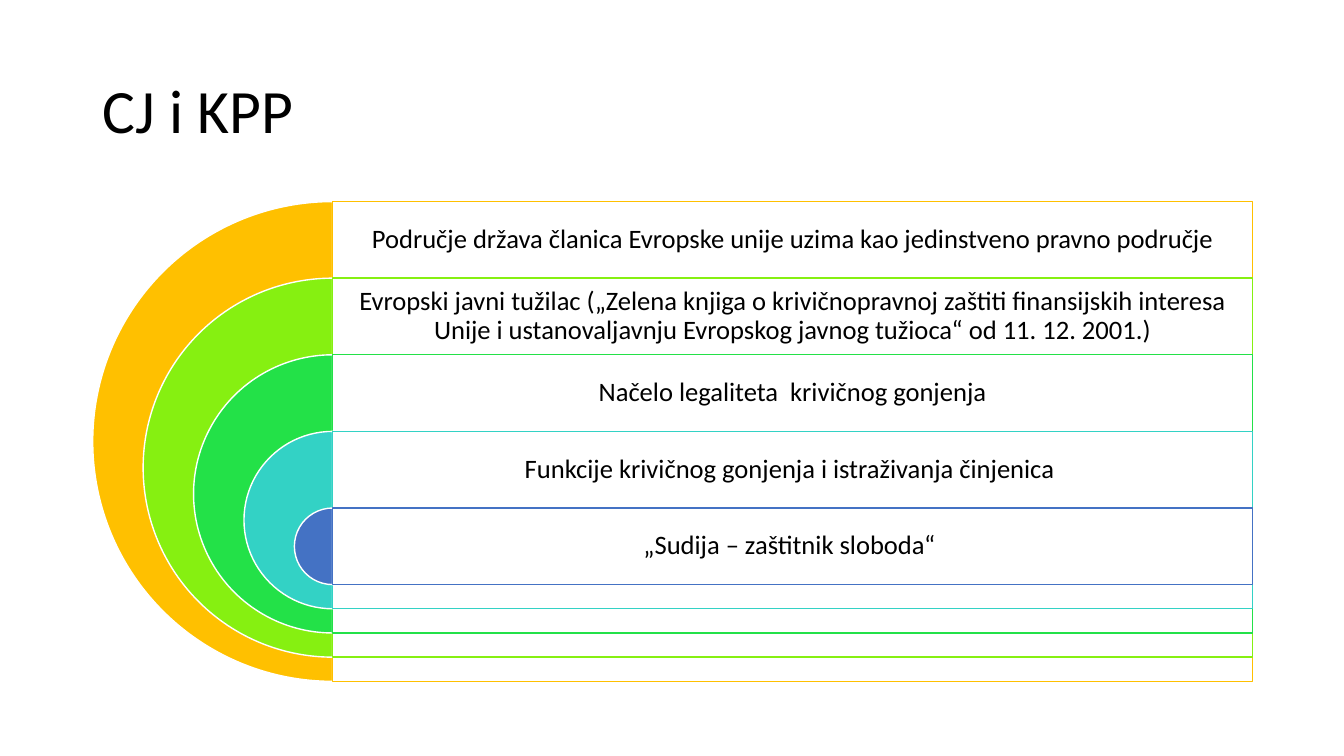
import pptx
import pptx.dml.color
import pptx.enum.shapes
import pptx.enum.text
import pptx.oxml
import pptx.oxml.ns
import pptx.util

COLORS = {
    "text": "000000",
    "white": "FFFFFF",
    "amber": "FFC000",
    "lime": "86F011",
    "green": "23E148",
    "teal": "33D2C5",
    "blue": "4472C4",
}

LAYERS = [
    ("amber", "Područje država članica Evropske unije uzima kao jedinstveno pravno područje"),
    ("lime", "Evropski javni tužilac („Zelena knjiga o krivičnopravnoj zaštiti finansijskih "
             "interesa Unije i ustanovaljavnju Evropskog javnog tužioca“ od 11. 12. 2001.)"),
    ("green", "Načelo legaliteta  krivičnog gonjenja"),
    ("teal", "Funkcije krivičnog gonjenja i istraživanja činjenica "),
    ("blue", "„Sudija – zaštitnik sloboda“ "),
]

SHAPE = pptx.enum.shapes.MSO_SHAPE
ALIGN = pptx.enum.text.PP_ALIGN


class Deck:
    FONT = "Calibri"
    LEFT, TOP = 0.92, 2.0  # grid origin in inches
    COL, ROW = 0.5, 0.76   # grid steps in inches

    def __init__(self):
        self.prs = pptx.Presentation()
        self.prs.slide_width = pptx.util.Inches(13.33)
        self.prs.slide_height = pptx.util.Inches(7.5)
        self.s = self.prs.slides.add_slide(self.prs.slide_layouts[5])

    def box(self, col, row, cols, rows):
        """Turn grid cells into left, top, width and height."""
        inches = (self.LEFT + col * self.COL, self.TOP + row * self.ROW,
                  cols * self.COL, rows * self.ROW)
        return [pptx.util.Inches(v) for v in inches]

    def color(self, name):
        return pptx.dml.color.RGBColor.from_string(COLORS[name])

    def add_text(self, sp, text, size, align):
        tf = sp.text_frame
        tf.word_wrap = True
        tf.auto_size = pptx.enum.text.MSO_AUTO_SIZE.NONE
        tf.vertical_anchor = pptx.enum.text.MSO_ANCHOR.MIDDLE
        p = tf.paragraphs[0]
        p.alignment = align
        p.line_spacing = 0.9
        r = p.add_run()
        r.text = text
        r.font.name = self.FONT
        r.font.size = pptx.util.Pt(size)
        r.font.color.rgb = self.color("text")

    def title(self, text, *cells):
        sp = self.s.shapes.title
        sp.left, sp.top, sp.width, sp.height = self.box(*cells)
        self.add_text(sp, text, 44, ALIGN.LEFT)

    def shape(self, kind, fill, line, *cells):
        sp = self.s.shapes.add_shape(kind, *self.box(*cells))
        sp.shadow.inherit = False
        sp.fill.solid()
        sp.fill.fore_color.rgb = self.color(fill)
        sp.line.color.rgb = self.color(line)
        sp.line.width = pptx.util.Pt(1)
        return sp

    def half_disc(self, fill, *cells):
        sp = self.shape(SHAPE.PIE, fill, "white", *cells)
        sp.adjustments[0] = 54   # 90 degrees
        sp.adjustments[1] = 162  # 270 degrees

    def panel(self, line, *cells):
        """Draw a white rectangle at 90 % opacity."""
        sp = self.shape(SHAPE.RECTANGLE, "white", line, *cells)
        fill = sp.element.spPr.find(pptx.oxml.ns.qn("a:solidFill"))
        fill[0].append(pptx.oxml.parse_xml(
            '<a:alpha %s val="90000"/>' % pptx.oxml.ns.nsdecls("a")))

    def label(self, text, *cells):
        sp = self.s.shapes.add_textbox(*self.box(*cells))
        tf = sp.text_frame
        tf.margin_left = tf.margin_right = pptx.util.Inches(0.08)
        tf.margin_top = tf.margin_bottom = pptx.util.Inches(0.08)
        self.add_text(sp, text, 19, ALIGN.CENTER)


def main():
    deck = Deck()
    deck.title("CJ i KPP", 0, -2.11, 23, 1.91)

    axis, panel_cols = 4.76, 18.24
    for i, (color, text) in enumerate(LAYERS):
        # Each layer starts one row lower and one column further in.
        cols = 2 * (axis - i)
        rows = cols * deck.COL / deck.ROW
        deck.half_disc(color, i, i, cols, rows)
        deck.panel(color, axis, i, panel_cols, rows)
        deck.label(text, axis, i, panel_cols, 1)

    deck.prs.save("out.pptx")


if __name__ == "__main__":
    main()
